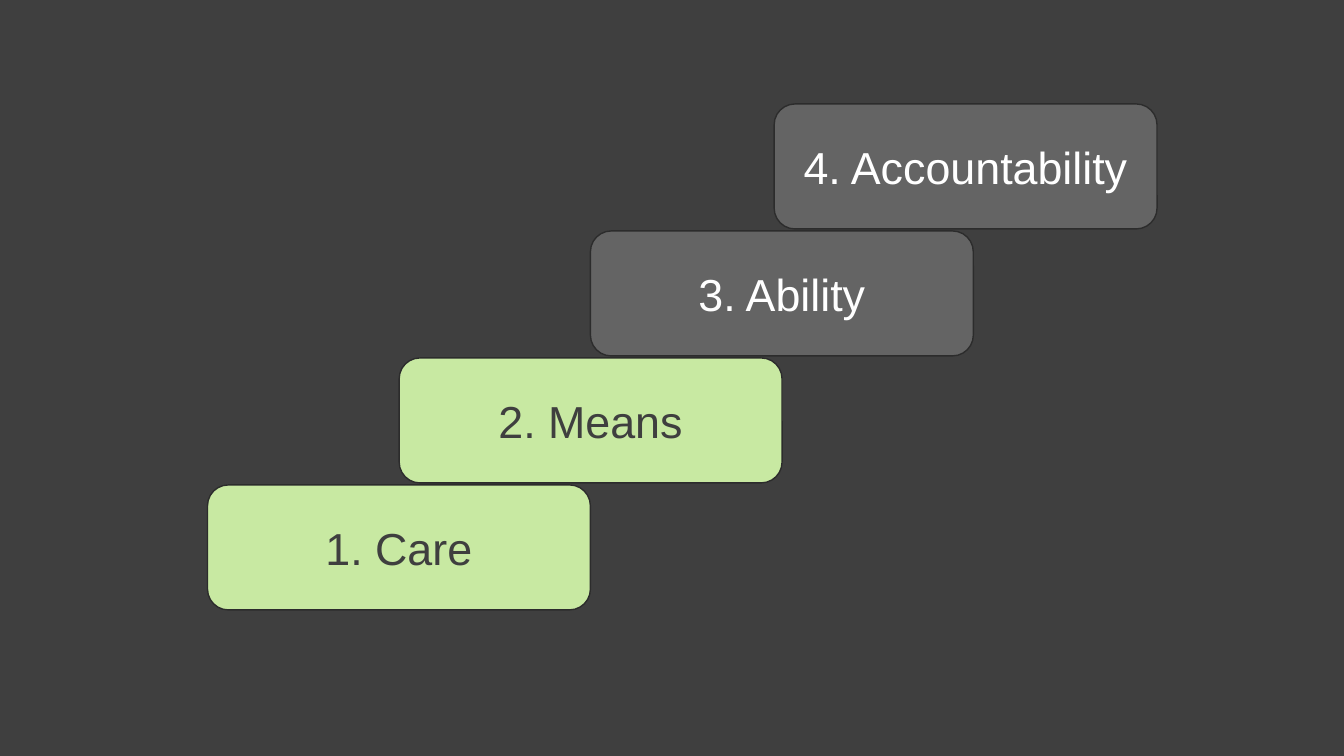
from pptx import Presentation
from pptx.dml.color import RGBColor
from pptx.enum.shapes import MSO_SHAPE
from pptx.enum.text import MSO_ANCHOR, PP_ALIGN
from pptx.util import Cm, Pt

ROUNDED = MSO_SHAPE.ROUNDED_RECTANGLE
MIDDLE = MSO_ANCHOR.MIDDLE
CENTER = PP_ALIGN.CENTER

CHARCOAL = RGBColor(0x3F, 0x3F, 0x3F)
GREEN = RGBColor(0xC8, 0xE9, 0xA2)
GRAY = RGBColor(0x64, 0x64, 0x64)
OUTLINE = RGBColor(0x2C, 0x2C, 0x2C)
WHITE = RGBColor(0xFF, 0xFF, 0xFF)

STEP_WIDTH, STEP_HEIGHT = 9.65, 3.15
FIRST_TOP, RISE = 12.22, 3.2

# Label, left edge in cm, fill, text colour; from the bottom step up
STEPS = [
    ("1. Care", 5.23, GREEN, CHARCOAL),
    ("2. Means", 10.06, GREEN, CHARCOAL),
    ("3. Ability", 14.88, GRAY, WHITE),
    ("4. Accountability", 19.51, GRAY, WHITE),
]


def set_background(slide, color):
    fill = slide.background.fill
    fill.solid()
    fill.fore_color.rgb = color


def add_step(slide, label, left, top, fill, color):
    s = slide.shapes.add_shape(ROUNDED, Cm(left), Cm(top),
                               Cm(STEP_WIDTH), Cm(STEP_HEIGHT))
    s.shadow.inherit = False
    s.fill.solid()
    s.fill.fore_color.rgb = fill
    s.line.color.rgb = OUTLINE
    s.line.width = Pt(1)

    tf = s.text_frame
    tf.word_wrap = True
    tf.vertical_anchor = MIDDLE
    tf.text = label
    p = tf.paragraphs[0]
    p.alignment = CENTER
    r = p.runs[0]
    r.font.name = "Arial"
    r.font.size = Pt(32)
    r.font.color.rgb = color


def main():
    prs = Presentation()
    prs.slide_width, prs.slide_height = Cm(33.87), Cm(19.05)
    slide = prs.slides.add_slide(prs.slide_layouts[6])
    set_background(slide, CHARCOAL)

    # Staircase
    for i, (label, left, fill, color) in enumerate(STEPS):
        add_step(slide, label, left, FIRST_TOP - i * RISE, fill, color)

    prs.save("out.pptx")


if __name__ == "__main__":
    main()
